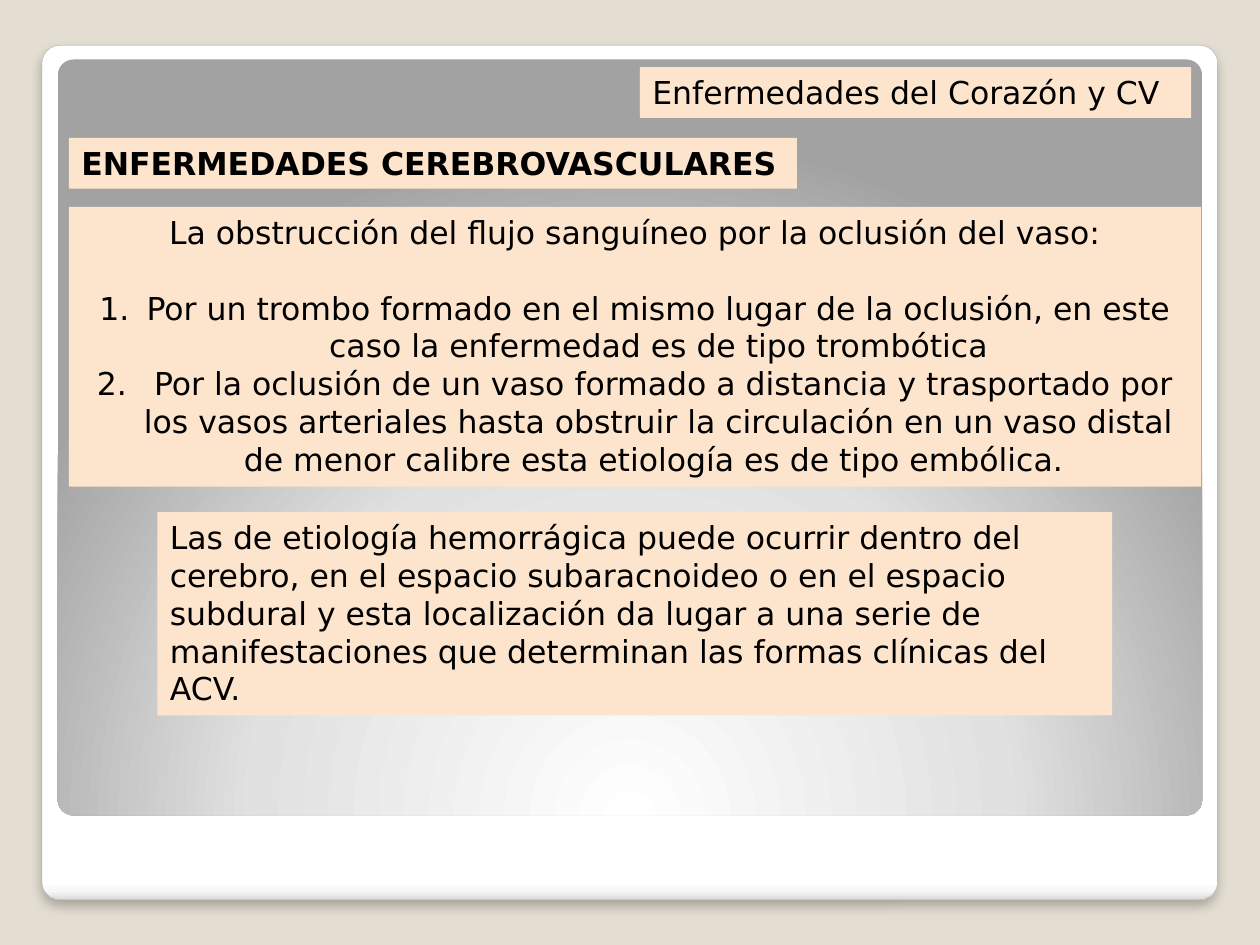
"""Build the slide on cerebrovascular diseases."""
import pptx
import pptx.dml.color
import pptx.enum.shapes
import pptx.enum.text
import pptx.oxml
import pptx.oxml.ns
import pptx.util

ALIGN = pptx.enum.text.PP_ALIGN
SHAPES = pptx.enum.shapes.MSO_SHAPE
Pt = pptx.util.Pt

THEME = {
    "background": "E3DED1", "box": "FDE5CD", "text": "000000",
    "outline": "A4A4A4", "font": "DejaVu Sans", "size": 18,
}
SLIDE_SIZE = (720, 540)
CORNER = 0.021
FRAME = {
    "at": (24, 25.9, 671.8, 488.2),
    "stops": [(0, "FFFFFF"), (98, "FFFFFF"), (99, "F7F7F7"), (100, "DADADA")],
    "direction": '<a:lin ang="5400000" scaled="0"/>',
}
PANEL = {
    "at": (33, 34, 654, 432),
    "stops": [(0, "FFFFFF"), (55, "E1E1E1"), (100, "A2A2A2")],
    "direction": '<a:path path="circle"><a:fillToRect l="50000" t="175000" '
                 'r="50000" b="-75000"/></a:path>',
}
SHADOW = ('<a:outerShdw {ns} blurRad="76200" dist="50800" dir="5400000" algn="tl" '
          'rotWithShape="0"><a:srgbClr val="000000"><a:alpha val="25000"/>'
          '</a:srgbClr></a:outerShdw>')
NUMBER_INDENT = 27
BOXES = [
    {"at": (39.4, 118.2, 647, 160), "format": {"alignment": ALIGN.CENTER}, "texts": [
        "La obstrucción del flujo sanguíneo por la oclusión del vaso:"],
     "numbered": [
        "Por un trombo formado en el mismo lugar de la oclusión, en este caso "
        "la enfermedad es de tipo trombótica",
        " Por la oclusión de un vaso formado a distancia y trasportado por los vasos "
        "arteriales hasta obstruir la circulación en un vaso distal de menor calibre "
        "esta etiología es de tipo embólica. "]},
    {"at": (365.7, 38.4, 315, 29), "texts": ["Enfermedades del Corazón y CV"]},
    {"at": (39.4, 78.8, 416, 29), "texts": ["ENFERMEDADES CEREBROVASCULARES"],
     "bold": True, "wrap": False},
    {"at": (90, 292.6, 545.6, 116.2), "texts": [
        "Las de etiología hemorrágica puede ocurrir dentro del cerebro, en el espacio "
        "subaracnoideo o en el espacio subdural y esta localización da lugar a una serie "
        "de manifestaciones que determinan las formas clínicas del ACV."]},
]


def color(name):
    return pptx.dml.color.RGBColor.from_string(THEME[name])


def apply(target, values):
    for name, value in values.items():
        setattr(target, name, value)


def xml(text):
    return pptx.oxml.parse_xml(text.format(ns=pptx.oxml.ns.nsdecls("a")))


def add_shape(slide, kind, at):
    shape = slide.shapes.add_shape(kind, *map(Pt, at))
    shape.shadow.inherit = False
    shape.line.fill.background()
    return shape


def add_panel(slide, panel):
    shape = add_shape(slide, SHAPES.ROUNDED_RECTANGLE, panel["at"])
    shape.adjustments[0] = CORNER
    stops = "".join(f'<a:gs pos="{position * 1000}"><a:srgbClr val="{value}"/></a:gs>'
                    for position, value in panel["stops"])
    gradient = xml('<a:gradFill {ns} rotWithShape="1"><a:gsLst>' + stops
                   + "</a:gsLst>" + panel["direction"] + "</a:gradFill>")
    properties = shape._element.spPr
    properties.insert(2, gradient)
    return shape


def number(paragraph):
    properties = paragraph._p.get_or_add_pPr()
    indent = Pt(NUMBER_INDENT)
    properties.set("marL", str(indent))
    properties.set("indent", str(-indent))
    properties.append(xml('<a:buFont {ns} typeface="+mj-lt"/>'))
    properties.append(xml('<a:buAutoNum {ns} type="arabicPeriod"/>'))


def add_box(slide, box):
    shape = add_shape(slide, SHAPES.RECTANGLE, box["at"])
    shape.fill.solid()
    shape.fill.fore_color.rgb = color("box")
    frame = shape.text_frame
    apply(frame, {"word_wrap": box.get("wrap", True),
                  "vertical_anchor": pptx.enum.text.MSO_ANCHOR.TOP,
                  "auto_size": pptx.enum.text.MSO_AUTO_SIZE.SHAPE_TO_FIT_TEXT})
    numbered = box.get("numbered", [])
    for index, text in enumerate(box["texts"] + numbered):
        paragraph = frame.paragraphs[0] if index == 0 else frame.add_paragraph()
        apply(paragraph, {"alignment": ALIGN.LEFT, **box.get("format", {})})
        if index >= len(box["texts"]):
            number(paragraph)
        elif numbered:
            paragraph.space_after = Pt(21.6)
        run = paragraph.add_run()
        run.text = text
        apply(run.font, {"name": THEME["font"], "size": Pt(THEME["size"]),
                         "bold": box.get("bold", False)})
        run.font.color.rgb = color("text")


def main():
    presentation = pptx.Presentation()
    width, height = map(Pt, SLIDE_SIZE)
    apply(presentation, {"slide_width": width, "slide_height": height})
    slide = presentation.slides.add_slide(presentation.slide_layouts[6])
    slide.background.fill.solid()
    slide.background.fill.fore_color.rgb = color("background")
    frame = add_panel(slide, FRAME)
    frame.line.color.rgb = color("outline")
    frame.line.width = Pt(0.16)
    frame._element.spPr.find(pptx.oxml.ns.qn("a:effectLst")).append(xml(SHADOW))
    add_panel(slide, PANEL)
    for box in BOXES:
        add_box(slide, box)
    presentation.save("out.pptx")


if __name__ == "__main__":
    main()
